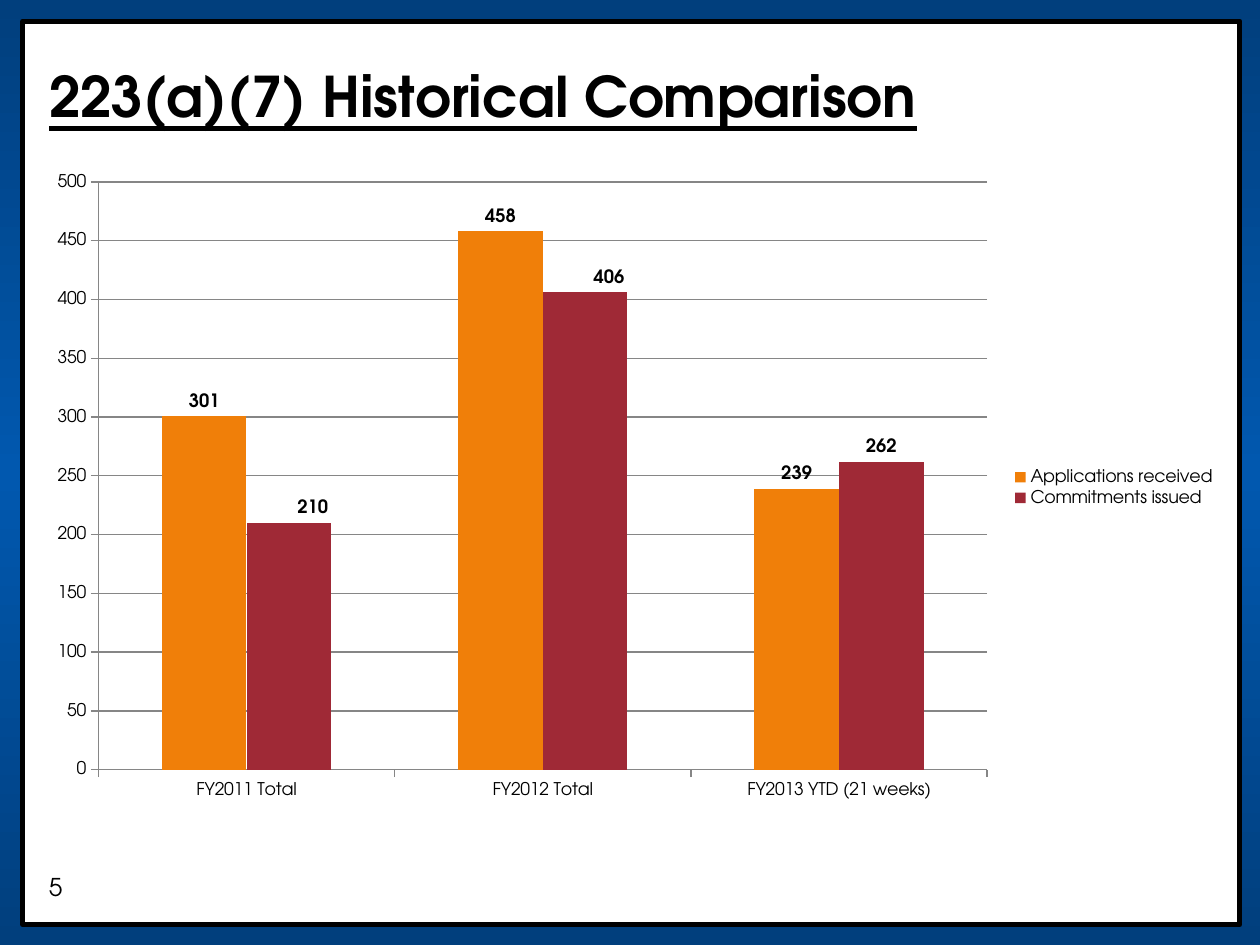
from dataclasses import dataclass

from lxml.etree import SubElement
from pptx import Presentation
from pptx.chart.data import CategoryChartData
from pptx.dml.color import RGBColor
from pptx.enum.chart import XL_CHART_TYPE as ChartType
from pptx.enum.chart import XL_LABEL_POSITION as LabelPosition
from pptx.enum.chart import XL_LEGEND_POSITION as LegendPosition
from pptx.enum.chart import XL_TICK_MARK as TickMark
from pptx.enum.shapes import MSO_SHAPE as Shape
from pptx.enum.text import MSO_ANCHOR as Anchor
from pptx.enum.text import PP_ALIGN as Align
from pptx.oxml import parse_xml
from pptx.oxml.ns import nsdecls, qn
from pptx.util import Pt


@dataclass(frozen=True)
class Theme:
    font: str = "TeX Gyre Adventor"
    ink: str = "000000"
    paper: str = "FFFFFF"
    grid: str = "868686"
    backdrop: tuple = ((0, "013F7D"), (50, "0158AF"), (100, "013F7D"))
    series: tuple = ("F07F09", "9F2936")
    title_size: float = 32
    number_size: float = 14
    chart_size: float = 10
    label_size: float = 10.5


THEME = Theme()
CATEGORIES = ["FY2011 Total", "FY2012 Total", "FY2013 YTD (21 weeks)"]
SERIES = {
    "Applications received": (301, 458, 239),
    "Commitments issued": (210, 406, 262),
}
LABEL_SHIFT = 0.02  # share of the chart width
SHIFTED_POINTS = {"Commitments issued": (0, 1)}


def color(value):
    return RGBColor.from_string(value)


def style_font(font, size, **flags):
    values = {"name": THEME.font, "size": Pt(size), **flags}
    for name, value in values.items():
        setattr(font, name, value)
    font.color.rgb = color(THEME.ink)


def place(shape, box):
    for name, value in zip(("left", "top", "width", "height"), box):
        setattr(shape, name, Pt(value))


def add_panel(page, box):
    panel = page.shapes.add_shape(Shape.RECTANGLE, *map(Pt, box))
    panel.shadow.inherit = False
    return panel


def add_frame(page, box):
    """Gradient backdrop with a black-edged white sheet inside it."""
    left, top, width, height = box
    backdrop = add_panel(page, box)
    backdrop.line.fill.background()
    backdrop.fill.gradient()
    backdrop.fill.gradient_angle = 90
    stops = backdrop._element.spPr.find(".//" + qn("a:gsLst"))
    for stop in list(stops):
        stops.remove(stop)
    for percent, value in THEME.backdrop:
        stop = SubElement(stops, qn("a:gs"), pos=str(percent * 1000))
        SubElement(stop, qn("a:srgbClr"), val=value)

    sheet = add_panel(page, (left + 13, top + 12.2, width - 24.5, height - 23.8))
    sheet.fill.solid()
    sheet.fill.fore_color.rgb = color(THEME.paper)
    sheet.line.color.rgb = color(THEME.ink)
    sheet.line.width = Pt(3)


def add_page_number(page, box, number):
    frame = page.shapes.add_textbox(*map(Pt, box)).text_frame
    frame.word_wrap = True
    span = frame.paragraphs[0].add_run()
    span.text = str(number)
    style_font(span.font, THEME.number_size)


def fill_title(page, box, text):
    title = page.shapes.title
    page.shapes._spTree.append(title._element)  # in front of the frame
    place(title, box)
    frame = title.text_frame
    frame.vertical_anchor = Anchor.MIDDLE
    frame.word_wrap = True
    para = frame.paragraphs[0]
    para.alignment = Align.LEFT
    span = para.add_run()
    span.text = text
    style_font(span.font, THEME.title_size, bold=True, underline=True)


def layout_xml(**values):
    items = "".join(f'<c:{name} val="{value}"/>' for name, value in values.items())
    return parse_xml(
        f'<c:layout {nsdecls("c")}><c:manualLayout>{items}</c:manualLayout></c:layout>'
    )


def set_plot_layout(chart):
    plot_area = chart._chartSpace.find(".//" + qn("c:plotArea"))
    for old in plot_area.findall(qn("c:layout")):
        plot_area.remove(old)
    plot_area.insert(0, layout_xml(
        layoutTarget="inner", xMode="edge", yMode="edge",
        x=0.054, y=0.03, w=0.744, h=0.904,
    ))


def style_axes(chart):
    for axis in (chart.category_axis, chart.value_axis):
        axis.major_tick_mark = TickMark.OUTSIDE
        axis.minor_tick_mark = TickMark.NONE
        axis.format.line.color.rgb = color(THEME.grid)
        axis.format.line.width = Pt(0.75)
    scale = chart.value_axis
    for name, value in {"minimum_scale": 0, "maximum_scale": 500, "major_unit": 50}.items():
        setattr(scale, name, value)
    scale.has_major_gridlines = True
    scale.major_gridlines.format.line.color.rgb = color(THEME.grid)
    scale.major_gridlines.format.line.width = Pt(0.75)


def style_series(series, fill):
    series.invert_if_negative = False
    series.format.fill.solid()
    series.format.fill.fore_color.rgb = color(fill)
    labels = series.data_labels
    labels.show_value = True
    labels.position = LabelPosition.OUTSIDE_END
    style_font(labels.font, THEME.label_size, bold=True)
    for index in SHIFTED_POINTS.get(series.name, ()):
        label = series.points[index].data_label
        label.position = LabelPosition.OUTSIDE_END
        style_font(label.font, THEME.label_size, bold=True)
        element = labels._element.findall(qn("c:dLbl"))[-1]
        element.insert(1, layout_xml(x=LABEL_SHIFT, y=0))


def add_comparison_chart(page, box):
    data = CategoryChartData()
    data.categories = CATEGORIES
    for name, values in SERIES.items():
        data.add_series(name, values)
    chart = page.shapes.add_chart(
        ChartType.COLUMN_CLUSTERED, *map(Pt, box), data
    ).chart
    chart.has_title = False
    style_font(chart.font, THEME.chart_size)
    chart.has_legend = True
    chart.legend.position = LegendPosition.RIGHT
    chart.legend.include_in_layout = False
    plot = chart.plots[0]
    plot.gap_width = 150
    plot.overlap = 0
    plot.vary_by_categories = False
    set_plot_layout(chart)
    style_axes(chart)
    for series, fill in zip(plot.series, THEME.series):
        style_series(series, fill)


def main():
    deck = Presentation()
    deck.slide_width, deck.slide_height = Pt(720), Pt(540)
    page = deck.slides.add_slide(deck.slide_layouts[5])
    add_frame(page, (0, 0, 720, 540))
    add_page_number(page, (20.9, 494.6, 34.6, 24.5), 5)
    fill_title(page, (20.9, 16.6, 683.3, 75.6), "223(a)(7) Historical Comparison")
    add_comparison_chart(page, (19.4, 92.9, 682.6, 371.5))
    deck.save("out.pptx")


if __name__ == "__main__":
    main()
